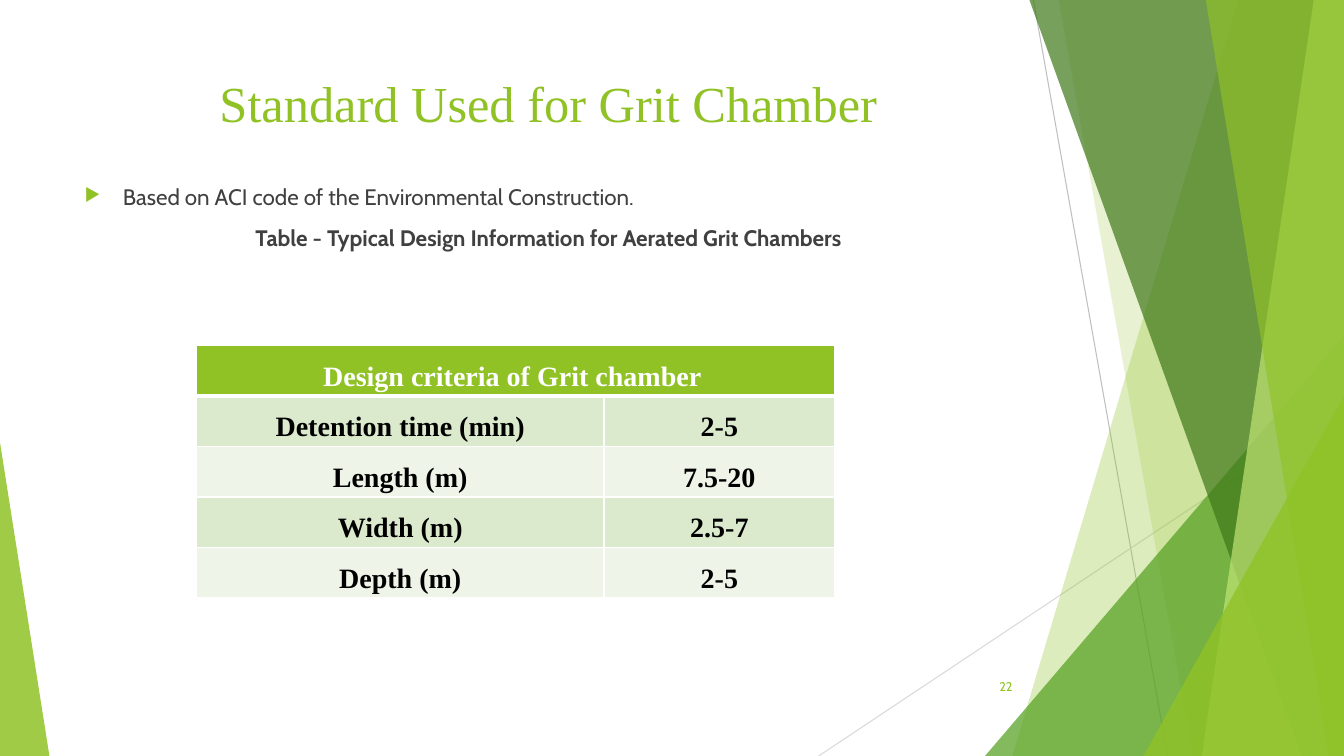
import pptx
import pptx.util
import pptx.dml.color
import pptx.enum.shapes
import pptx.enum.text
import pptx.oxml
from pptx.oxml.ns import nsdecls, qn

Inches = pptx.util.Inches
Pt = pptx.util.Pt
RGBColor = pptx.dml.color.RGBColor
ALIGN = pptx.enum.text.PP_ALIGN
SERIF = "Times New Roman"
SANS = "Cabin"
COLORS = {
    "green": "90C226",
    "leaf": "54A021",
    "forest": "3F7819",
    "lime": "C0E474",
    "text": "404040",
    "white": "FFFFFF",
    "black": "000000",
    "dark band": "DBE9CD",
    "light band": "EEF4E8",
    "gray": "BFBFBF",
    "pale gray": "D9D9D9",
}


def paint(shape, color, opacity):
    """Fill a borderless shape with a colour at an opacity in percent."""
    shape.shadow.inherit = False
    shape.line.fill.background()
    shape.fill.solid()
    shape.fill.fore_color.rgb = RGBColor.from_string(COLORS[color])
    color_element = shape.fill._xPr.find(qn("a:solidFill"))[0]
    color_element.append(pptx.oxml.parse_xml(
        f'<a:alpha {nsdecls("a")} val="{opacity * 1000}"/>'))


def add_run(paragraph, text, size, font, color, bold=False):
    run = paragraph.add_run()
    run.text = text
    run.font.size = Pt(size)
    run.font.name = font
    run.font.bold = bold
    run.font.color.rgb = RGBColor.from_string(COLORS[color])


presentation = pptx.Presentation()
presentation.slide_width = Inches(13.33)
presentation.slide_height = Inches(7.5)
slide = presentation.slides.add_slide(presentation.slide_layouts[6])
shapes = slide.shapes

# Thin background lines
for x1, y1, x2, y2, color in [
    (10.25, 0, 11.58, 7.5, "gray"),
    (13.33, 4.03, 8.12, 7.5, "pale gray"),
]:
    line = shapes.add_connector(
        pptx.enum.shapes.MSO_CONNECTOR.STRAIGHT,
        Inches(x1), Inches(y1), Inches(x2), Inches(y2))
    line.line.width = Pt(0.75)
    line.line.color.rgb = RGBColor.from_string(COLORS[color])
    line._element.spPr.append(
        pptx.oxml.parse_xml(f'<a:effectLst {nsdecls("a")}/>'))

# Facets: bands run from a top x and a bottom x to the right edge of the slide,
# triangles have a left, top, width, height and apex position
for kind, geometry, color, opacity in [
    ("band", (12.28, 10.04), "green", 30),
    ("band", (10.5, 11.83), "green", 20),
    ("triangle", (9.77, 3.33, 3.56, 4.17, 1), "leaf", 72),
    ("band", (10.21, 12.91), "forest", 70),
    ("band", (13.03, 11.92), "lime", 70),
    ("band", (11.96, 13.18), "green", 65),
    ("triangle", (11.34, 3.93, 1.99, 3.57, 1), "green", 80),
    ("triangle", (0, 4.39, 0.49, 3.11, 0), "green", 85),
]:
    if kind == "band":
        top_x, bottom_x = geometry
        builder = shapes.build_freeform(Inches(top_x), 0)
        builder.add_line_segments([
            (Inches(13.33), 0),
            (Inches(13.33), Inches(7.5)),
            (Inches(bottom_x), Inches(7.5)),
        ], close=True)
        facet = builder.convert_to_shape()
    else:
        *box, apex = geometry
        facet = shapes.add_shape(
            pptx.enum.shapes.MSO_SHAPE.ISOSCELES_TRIANGLE,
            *[Inches(length) for length in box])
        facet.adjustments[0] = apex
    paint(facet, color, opacity)

# Title
title = shapes.add_textbox(Inches(0.74), Inches(0.67), Inches(9.4), Inches(0.91))
title.text_frame.word_wrap = True
paragraph = title.text_frame.paragraphs[0]
paragraph.alignment = ALIGN.CENTER
add_run(paragraph, "Standard Used for Grit Chamber", 36, SERIF, "green")

# Body text
body = shapes.add_textbox(Inches(0.74), Inches(1.77), Inches(9.4), Inches(4.84))
body.text_frame.word_wrap = True
paragraph = body.text_frame.paragraphs[0]
properties = paragraph._p.get_or_add_pPr()
properties.set("marL", str(Inches(0.38)))
properties.set("indent", str(-Inches(0.38)))
for bullet in [
    f'<a:buClr {nsdecls("a")}><a:srgbClr val="{COLORS["green"]}"/></a:buClr>',
    f'<a:buSzPct {nsdecls("a")} val="80000"/>',
    f'<a:buChar {nsdecls("a")} char="▶"/>',
]:
    properties.append(pptx.oxml.parse_xml(bullet))
add_run(paragraph, "Based on ACI code of the Environmental Construction.",
        16, SANS, "text")
caption = body.text_frame.add_paragraph()
caption.alignment = ALIGN.CENTER
caption.space_before = Pt(10)
add_run(caption, "Table - Typical Design Information for Aerated Grit Chambers",
        16, SANS, "text", bold=True)

# Slide number
number = shapes.add_textbox(Inches(9.39), Inches(6.61), Inches(0.75), Inches(0.4))
number.text_frame.word_wrap = True
number.text_frame.vertical_anchor = pptx.enum.text.MSO_ANCHOR.MIDDLE
paragraph = number.text_frame.paragraphs[0]
paragraph.alignment = ALIGN.RIGHT
add_run(paragraph, "22", 9, SANS, "green")

# Design criteria table
criteria = [
    ("Design criteria of Grit chamber ", ""),
    ("Detention time (min)", "2-5"),
    ("Length (m)", "7.5-20"),
    ("Width (m)", "2.5-7"),
    ("Depth (m)", "2-5"),
]
table = shapes.add_table(len(criteria), 2, Inches(1.95), Inches(3.43),
                         Inches(6.33), Inches(0.41 * len(criteria))).table
for column, width in zip(table.columns, (4.04, 2.29)):
    column.width = Inches(width)
table.cell(0, 0).merge(table.cell(0, 1))

for row_index, row in enumerate(criteria):
    table.rows[row_index].height = Inches(0.41)
    header = row_index == 0
    band = "green" if header else "dark band" if row_index % 2 else "light band"
    for column_index, text in enumerate(row):
        cell = table.cell(row_index, column_index)
        cell.margin_left = cell.margin_right = Inches(0.07)
        cell.margin_top = cell.margin_bottom = 0
        cell.fill.solid()
        cell.fill.fore_color.rgb = RGBColor.from_string(COLORS[band])
        for position, side in enumerate(("lnL", "lnR", "lnT", "lnB")):
            under_header = (header and side == "lnB") or (row_index == 1 and side == "lnT")
            width = Pt(3 if under_header else 1)
            cell._tc.tcPr.insert(position, pptx.oxml.parse_xml(
                f'<a:{side} {nsdecls("a")} w="{width}"><a:solidFill>'
                f'<a:srgbClr val="{COLORS["white"]}"/></a:solidFill></a:{side}>'))
        if text:
            paragraph = cell.text_frame.paragraphs[0]
            paragraph.alignment = ALIGN.CENTER
            paragraph.line_spacing = 1.5
            paragraph.space_after = Pt(8)
            add_run(paragraph, text, 20, SERIF,
                    "white" if header else "black", bold=True)

presentation.save("out.pptx")
